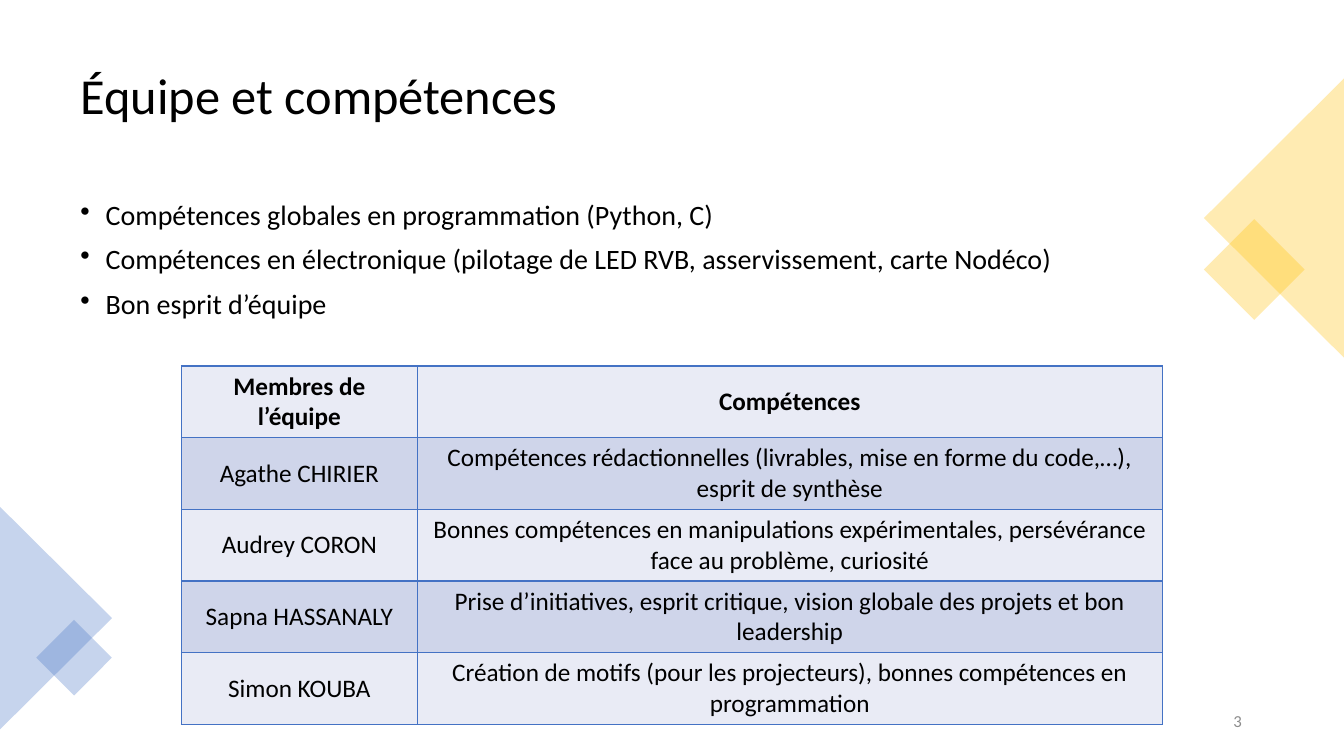
from pptx import Presentation
from pptx.dml.color import RGBColor as RGB
from pptx.enum.shapes import MSO_SHAPE as Shape
from pptx.enum.text import MSO_ANCHOR as Anchor, PP_ALIGN as Align
from pptx.oxml.ns import qn
from pptx.util import Pt
from lxml.etree import SubElement as Sub

BLACK = RGB(0, 0, 0)
GRAY = RGB(0x8C, 0x8C, 0x8C)
GOLD = RGB(0xFF, 0xC0, 0x00)
BLUE = RGB(0x44, 0x72, 0xC4)
LIGHT = RGB(0xE9, 0xEB, 0xF5)
DARK = RGB(0xCF, 0xD5, 0xEA)

SKILLS = [
    "Compétences globales en programmation (Python, C)",
    "Compétences en électronique (pilotage de LED RVB, asservissement, carte Nodéco)",
    "Bon esprit d’équipe",
]
TEAM = [
    ("Membres de l’équipe", "Compétences"),
    ("Agathe CHIRIER", "Compétences rédactionnelles (livrables, mise en forme du code,…), esprit de synthèse"),
    ("Audrey CORON", "Bonnes compétences en manipulations expérimentales, persévérance face au problème, curiosité"),
    ("Sapna HASSANALY", "Prise d’initiatives, esprit critique, vision globale des projets et bon leadership"),
    ("Simon KOUBA", "Création de motifs (pour les projecteurs), bonnes compétences en programmation"),
]


def style(para, size, color=BLACK, bold=False, align=Align.LEFT):
    para.alignment = align
    font = para.font
    font.name, font.size, font.bold = "Calibri", Pt(size), bold
    font.color.rgb = color


def add_text(slide, box, lines, size, color=BLACK, anchor=Anchor.MIDDLE, align=Align.LEFT):
    frame = slide.shapes.add_textbox(*map(Pt, box)).text_frame
    frame.word_wrap = True
    frame.vertical_anchor = anchor
    frame.text = "\n".join(lines)
    for para in frame.paragraphs:
        style(para, size, color, align=align)
    return frame.paragraphs


def add_title(slide, box):
    para, = add_text(slide, box, ["Équipe et compétences"], 36)
    para.line_spacing = 0.9


def add_list(slide, box):
    for para in add_text(slide, box, SKILLS, 20, anchor=Anchor.TOP):
        para.line_spacing = 0.9
        para.space_before = Pt(10)
        props = para._p.get_or_add_pPr()
        props.set("marL", str(Pt(18)))
        props.set("indent", str(-Pt(18)))
        mark = props.makeelement(qn("a:buChar"), {"char": "•"})
        props.insert_element_before(mark, "a:tabLst", "a:defRPr", "a:extLst")


def add_tint(slide, kind, box, turn, color):
    shape = slide.shapes.add_shape(kind, *map(Pt, box))
    shape.rotation = turn
    shape.shadow.inherit = False
    shape.line.fill.background()
    shape.fill.solid()
    shape.fill.fore_color.rgb = color
    tone = shape.element.spPr.find(qn("a:solidFill")).find(qn("a:srgbClr"))
    Sub(tone, qn("a:alpha"), val="30000")


def add_corner(slide, box, turn, square, color):
    left, top, wide, high = box
    base = (left + (wide - high) / 2, top + (high - wide) / 2, high, wide)
    right, down, side = square
    add_tint(slide, Shape.ISOSCELES_TRIANGLE, base, turn, color)
    add_tint(slide, Shape.RECTANGLE, (left + right, top + down, side, side), 45, color)


def add_edges(cell):
    props = cell._tc.get_or_add_tcPr()
    for side in "LRTB":
        line = Sub(props, qn("a:ln" + side), w=str(Pt(1)))
        fill = Sub(line, qn("a:solidFill"))
        Sub(fill, qn("a:srgbClr"), val=str(BLUE))


def add_team(slide, box):
    table = slide.shapes.add_table(len(TEAM), 2, *map(Pt, box)).table
    first = 168.5
    for col, wide in zip(table.columns, (first, box[2] - first)):
        col.width = Pt(wide)
    for i, texts in enumerate(TEAM):
        table.rows[i].height = Pt(box[3] / len(TEAM))
        for j, text in enumerate(texts):
            cell = table.cell(i, j)
            cell.text = text
            cell.vertical_anchor = Anchor.MIDDLE
            style(cell.text_frame.paragraphs[0], 18, bold=i == 0, align=Align.CENTER)
            add_edges(cell)
            cell.fill.solid()
            cell.fill.fore_color.rgb = DARK if i % 2 else LIGHT


def main():
    deck = Presentation()
    deck.slide_width, deck.slide_height = Pt(960), Pt(540)
    slide = deck.slides.add_slide(deck.slide_layouts[6])
    add_title(slide, (50.4, 25.2, 859, 89.3))
    add_list(slide, (50.4, 140.4, 859, 346.3))
    add_corner(slide, (860, 56, 100, 199.5), 270, (10.4, 111, 51), GOLD)
    add_corner(slide, (0, 362, 80, 159), 90, (33.8, 88.7, 38.2), BLUE)
    add_team(slide, (129.6, 261.4, 700.6, 256))
    add_text(slide, (678.2, 500.4, 216, 28.8), ["3"], 12, GRAY, align=Align.RIGHT)
    deck.save("out.pptx")


if __name__ == "__main__":
    main()
